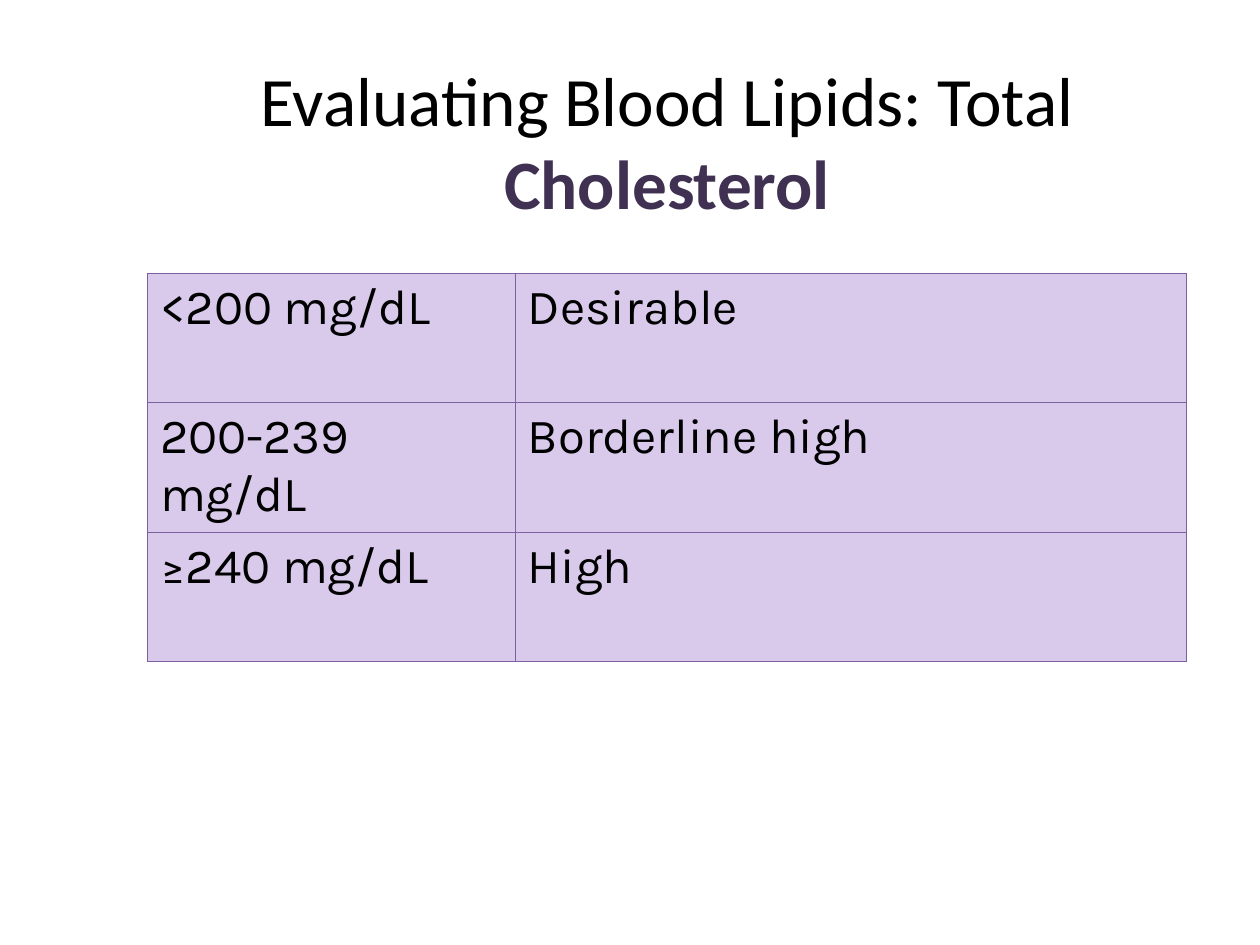
from pptx import Presentation
from pptx import util as u
from pptx.dml.color import RGBColor
from pptx.enum import text
from pptx.oxml import parse_xml
from pptx.oxml.ns import nsdecls

LEFT, WIDTH = 1.17, 8.25
BLACK, PLUM, LILAC, BORDER = "000000", "403152", "D9CAEC", "7D60A0"
LEVELS = [
    ("<200 mg/dL", "Desirable"),
    ("200-239 mg/dL", "Borderline high"),
    ("≥240 mg/dL", "High"),
]


def rgb(color):
    return RGBColor.from_string(color)


def style_run(r, font, size, color, bold=False):
    r.font.name = font
    r.font.size = u.Pt(size)
    r.font.color.rgb = rgb(color)
    r.font.bold = bold


def set_title(s, runs):
    """Fill the title placeholder from (text, color, bold) runs."""
    sp = s.shapes.title
    sp.left, sp.top = u.Inches(LEFT), u.Inches(0.33)
    sp.width, sp.height = u.Inches(WIDTH), u.Inches(1.57)
    tf = sp.text_frame
    tf.word_wrap = True
    tf.vertical_anchor = text.MSO_ANCHOR.MIDDLE
    p = tf.paragraphs[0]
    p.alignment = text.PP_ALIGN.CENTER
    for words, color, bold in runs:
        r = p.add_run()
        r.text = words
        style_run(r, "Calibri", 39.6, color, bold)


def set_borders(cell, color, width):
    tc_pr = cell._tc.get_or_add_tcPr()
    for i, side in enumerate(("lnL", "lnR", "lnT", "lnB")):
        tc_pr.insert(i, parse_xml(
            f'<a:{side} {nsdecls("a")} w="{u.Pt(width)}"><a:solidFill>'
            f'<a:srgbClr val="{color}"/></a:solidFill></a:{side}>'))


def style_cell(cell, words):
    cell.text_frame.text = words
    style_run(cell.text_frame.paragraphs[0].runs[0], "Karla", 28, BLACK)
    cell.fill.solid()
    cell.fill.fore_color.rgb = rgb(LILAC)
    set_borders(cell, BORDER, 0.75)


def add_level_table(s, rows, col_widths):
    table = s.shapes.add_table(
        len(rows), len(col_widths), u.Inches(LEFT), u.Inches(2.17),
        u.Inches(WIDTH), u.Inches(3.08)).table
    table.first_row = table.horz_banding = False
    for col, width in zip(table.columns, col_widths):
        col.width = u.Inches(width)
    for row, values in zip(table.rows, rows):
        for cell, words in zip(row.cells, values):
            style_cell(cell, words)


def main():
    prs = Presentation()
    prs.slide_width, prs.slide_height = u.Inches(10), u.Inches(7.5)
    s = prs.slides.add_slide(prs.slide_layouts[5])
    set_title(s, [("Evaluating Blood Lipids: Total ", BLACK, False),
                  ("Cholesterol", PLUM, True)])
    add_level_table(s, LEVELS, (2.92, 5.33))
    prs.save("out.pptx")


if __name__ == "__main__":
    main()
